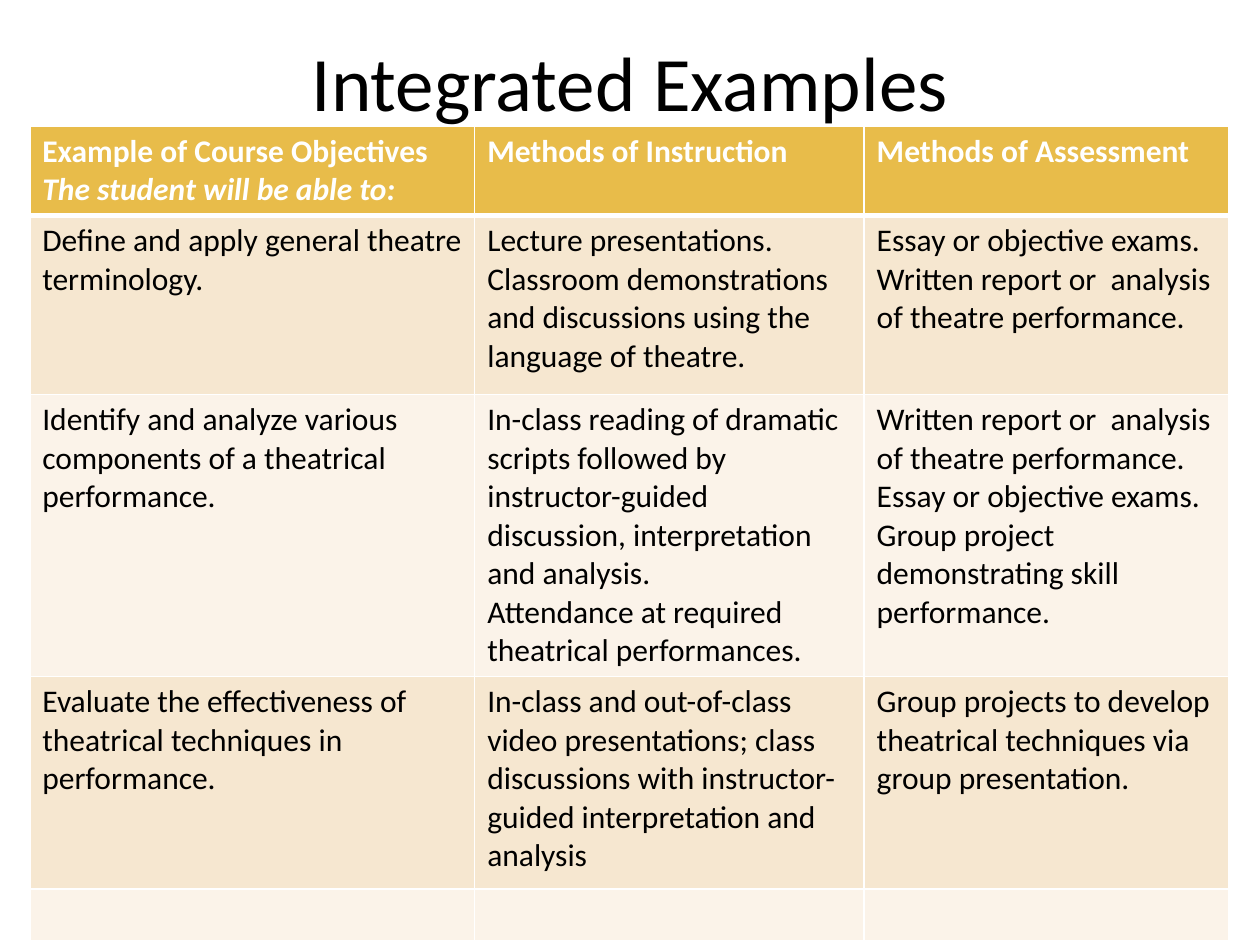
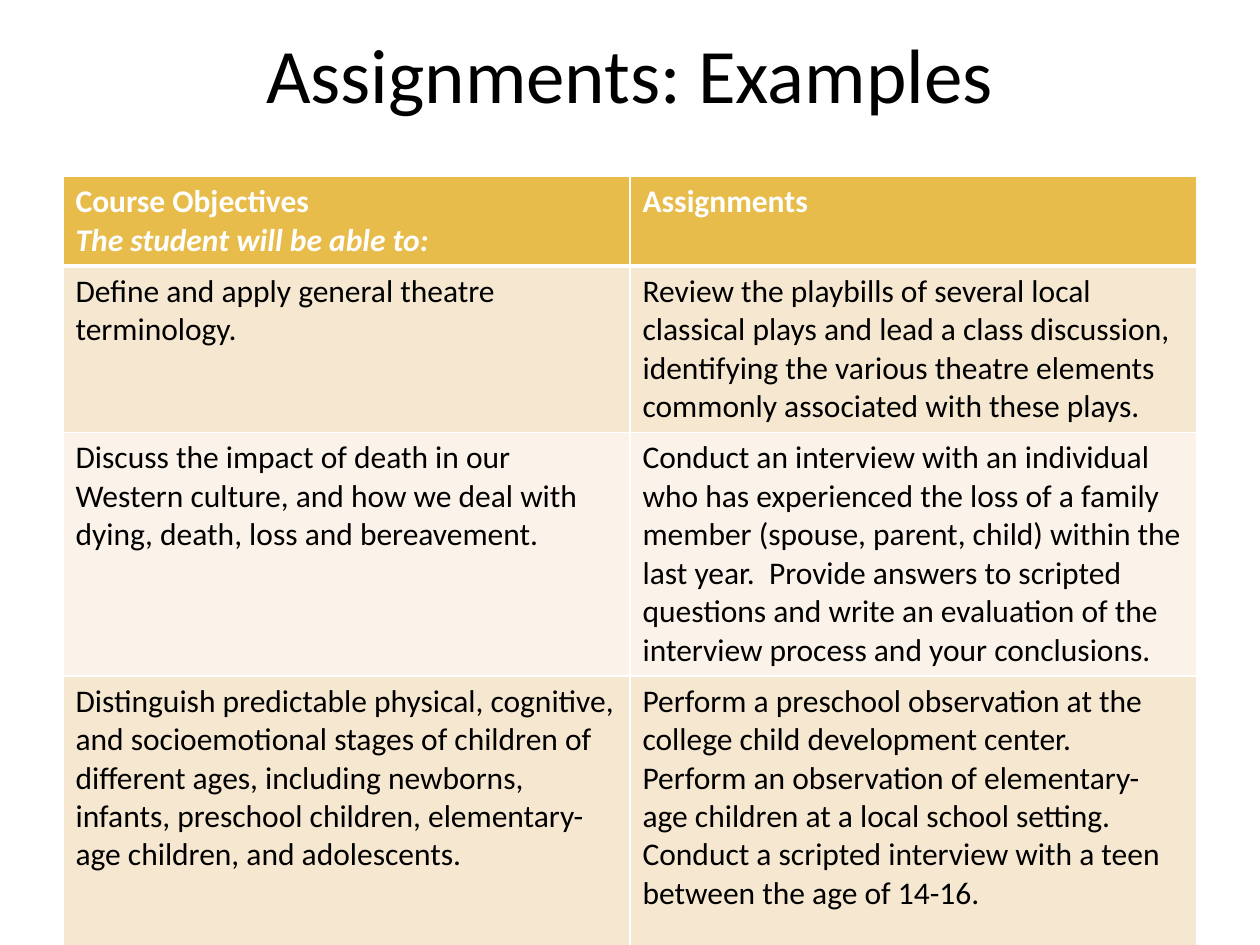
from lxml import etree
from pptx import Presentation
from pptx import util as u
from pptx.dml import color
from pptx.enum import text
from pptx.oxml import ns

FONT = "Calibri"
WHITE, BLACK = "FFFFFF", "000000"
HEADER_GOLD = "E8BC4A"
BANDS = ("F6E7D0", "FBF3E9")
TITLE_SIZE, TABLE_SIZE = 44, 18

INTEGRATED_ROWS = [
    ["Example of Course Objectives\nThe student will be able to:",
     "Methods of Instruction",
     "Methods of Assessment"],
    ["Define and apply general theatre terminology.",
     "Lecture presentations. Classroom demonstrations and discussions "
     "using the language of theatre.",
     "Essay or objective exams.\n"
     "Written report or  analysis of theatre performance."],
    ["Identify and analyze various components of a theatrical performance.",
     "In-class reading of dramatic scripts followed by instructor-guided "
     "discussion, interpretation and analysis.\n"
     "Attendance at required theatrical performances.",
     "Written report or  analysis of theatre performance.\n"
     "Essay or objective exams.\n"
     "Group project demonstrating skill performance."],
    ["Evaluate the effectiveness of theatrical techniques in performance.",
     "In-class and out-of-class video presentations; class discussions "
     "with instructor-guided interpretation and analysis",
     "Group projects to develop theatrical techniques via group presentation."],
    ["", "", ""],
]

ASSIGNMENT_ROWS = [
    ["Course Objectives\nThe student will be able to:", "Assignments"],
    ["Define and apply general theatre terminology.",
     "Review the playbills of several local classical plays and lead a class "
     "discussion, identifying the various theatre elements commonly "
     "associated with these plays."],
    ["Discuss the impact of death in our Western culture, and how we deal "
     "with dying, death, loss and bereavement.",
     "Conduct an interview with an individual who has experienced the loss of "
     "a family member (spouse, parent, child) within the last year.  Provide "
     "answers to scripted questions and write an evaluation of the interview "
     "process and your conclusions."],
    ["Distinguish predictable physical, cognitive, and socioemotional stages "
     "of children of different ages, including newborns, infants, preschool "
     "children, elementary-age children, and adolescents.",
     "Perform a preschool observation at the college child development center.\n"
     "Perform an observation of elementary-age children at a local school setting.\n"
     "Conduct a scripted interview with a teen between the age of 14-16."],
]


def rgb(hex_code):
    return color.RGBColor.from_string(hex_code)


def add_run(paragraph, words, size, hex_code, bold=False, italic=False):
    run = paragraph.add_run()
    run.text = words
    run.font.name = FONT
    run.font.size = u.Pt(size)
    run.font.color.rgb = rgb(hex_code)
    run.font.bold = bold
    run.font.italic = italic


def add_border(cell, side, points):
    line = etree.SubElement(cell._tc.get_or_add_tcPr(), ns.qn(f"a:ln{side}"),
                            w=str(u.Pt(points)))
    fill = etree.SubElement(line, ns.qn("a:solidFill"))
    etree.SubElement(fill, ns.qn("a:srgbClr"), val=WHITE)


def place_title(slide, words, box):
    title = slide.shapes.title
    title.left, title.top, title.width, title.height = map(u.Cm, box)
    frame = title.text_frame
    frame.auto_size = text.MSO_AUTO_SIZE.NONE
    frame.vertical_anchor = text.MSO_ANCHOR.MIDDLE
    heading = frame.paragraphs[0]
    heading.alignment = text.PP_ALIGN.CENTER
    add_run(heading, words, TITLE_SIZE, BLACK)


def fill_cell(cell, words, row_number):
    is_header = row_number == 0
    borders = {"L": 1, "R": 1, "T": 1, "B": 3} if is_header else {"L": 1, "R": 1, "B": 1}
    for side, points in borders.items():
        add_border(cell, side, points)
    cell.fill.solid()
    cell.fill.fore_color.rgb = rgb(HEADER_GOLD if is_header else BANDS[(row_number - 1) % 2])
    frame = cell.text_frame
    if not words:
        frame.paragraphs[0].font.size = u.Pt(TABLE_SIZE)
        return
    for number, line in enumerate(words.split("\n")):
        paragraph = frame.add_paragraph() if number else frame.paragraphs[0]
        add_run(paragraph, line, TABLE_SIZE, WHITE if is_header else BLACK,
                bold=is_header, italic=is_header and number > 0)


def place_table(slide, rows, corner, widths, heights):
    left, top = corner
    grid = slide.shapes.add_table(len(heights), len(widths), u.Cm(left), u.Cm(top),
                                  u.Cm(sum(widths)), u.Cm(sum(heights))).table
    for column, width in zip(grid.columns, widths):
        column.width = u.Cm(width)
    for row_number, (row, height) in enumerate(zip(grid.rows, heights)):
        row.height = u.Cm(height)
        for cell, words in zip(row.cells, rows[row_number]):
            fill_cell(cell, words, row_number)


def add_examples_slide(deck, title, title_box, rows, corner, widths, heights):
    slide = deck.slides.add_slide(deck.slide_layouts[5])
    place_title(slide, title, title_box)
    place_table(slide, rows, corner, widths, heights)


def main():
    deck = Presentation()
    deck.slide_width, deck.slide_height = u.Cm(25.4), u.Cm(19.05)
    add_examples_slide(deck, "Integrated Examples", (1.27, 0.36, 22.86, 2.54),
                       INTEGRATED_ROWS, (0.6, 2.54),
                       (8.97, 7.85, 7.34), (1.73, 3.61, 5.64, 4.29, 0.99))
    add_examples_slide(deck, "Assignments: Examples", (1.27, 0.38, 22.86, 2.18),
                       ASSIGNMENT_ROWS, (1.27, 3.56),
                       (11.43, 11.43), (1.75, 3.25, 4.75, 5.49))
    deck.save("out.pptx")


if __name__ == "__main__":
    main()
